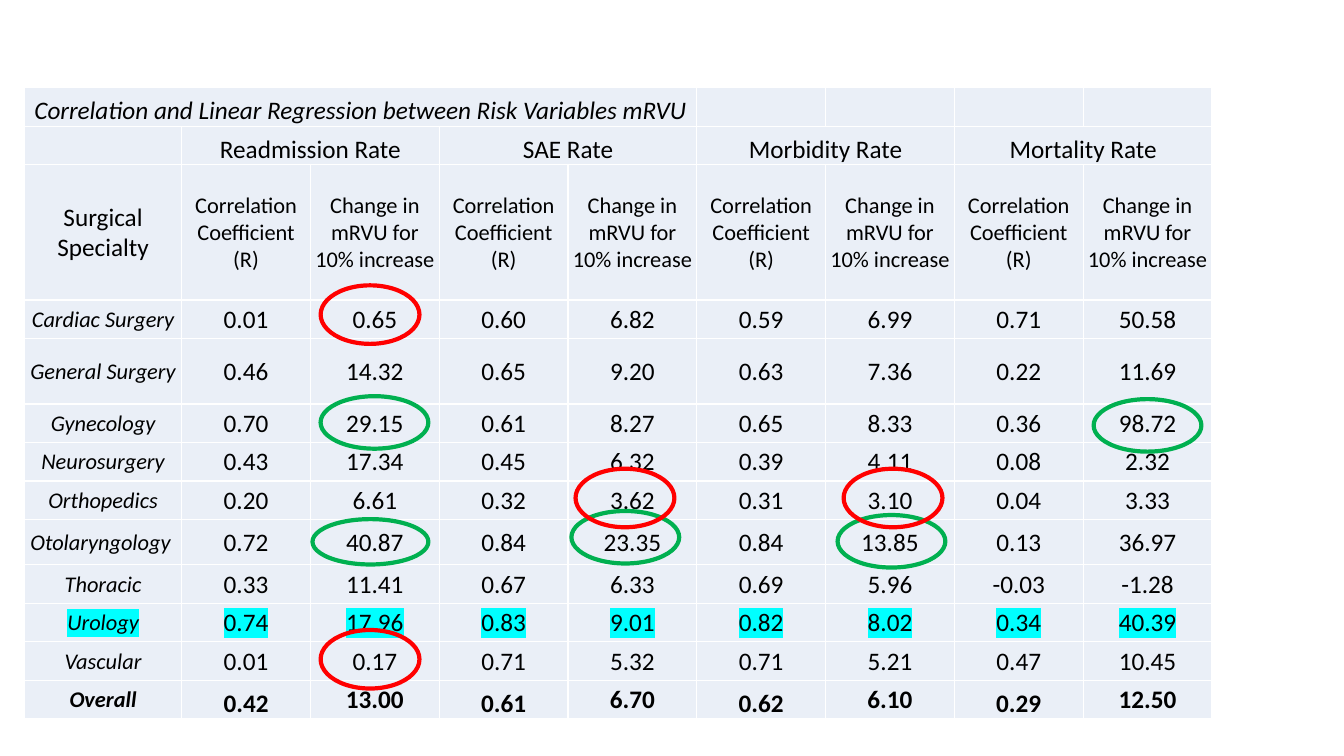
from lxml.etree import SubElement
from pptx import Presentation
from pptx.dml.color import RGBColor
from pptx.enum.shapes import MSO_SHAPE
from pptx.enum.text import MSO_ANCHOR, PP_ALIGN
from pptx.oxml.ns import qn
from pptx.util import Pt

FONT = "Calibri"
BLACK, WHITE, PALE, CYAN = "000000", "FFFFFF", "EAEFF7", "00FFFF"
GREEN, RED = "00B050", "FF0000"

TITLE = "Correlation and Linear Regression between Risk Variables mRVU"
RATES = ["Readmission Rate", "SAE Rate", "Morbidity Rate", "Mortality Rate"]
MEASURES = ["Correlation Coefficient (R)", "Change in mRVU for 10% increase"]
SPECIALTIES = [
    ("Cardiac Surgery", "0.01 0.65 0.60 6.82 0.59 6.99 0.71 50.58"),
    ("General Surgery", "0.46 14.32 0.65 9.20 0.63 7.36 0.22 11.69"),
    ("Gynecology", "0.70 29.15 0.61 8.27 0.65 8.33 0.36 98.72"),
    ("Neurosurgery", "0.43 17.34 0.45 6.32 0.39 4.11 0.08 2.32"),
    ("Orthopedics", "0.20 6.61 0.32 3.62 0.31 3.10 0.04 3.33"),
    ("Otolaryngology ", "0.72 40.87 0.84 23.35 0.84 13.85 0.13 36.97"),
    ("Thoracic", "0.33 11.41 0.67 6.33 0.69 5.96 -0.03 -1.28"),
    ("Urology", "0.74 17.96 0.83 9.01 0.82 8.02 0.34 40.39"),
    ("Vascular", "0.01 0.17 0.71 5.32 0.71 5.21 0.47 10.45"),
    ("Overall", "0.42 13.00 0.61 6.70 0.62 6.10 0.29 12.50"),
]
COL_WIDTHS = [112.3] + [92] * 8
ROW_HEIGHTS = [27.5, 27.5, 96.5, 27.5, 46.8] + [27.5] * 3 + [32.4] + [27.5] * 4

# left, top, width, height
HIGH_VALUES = [
    (229, 283, 77, 37.5),
    (223.2, 370.8, 82.8, 32.4),
    (408.2, 365, 77, 37.5),
    (598.3, 367.9, 77, 37.5),
    (781.2, 285.1, 77, 37.5),
]
LOW_VALUES = [(229, 203.8), (229, 450), (411.1, 334.8), (602.6, 334.8)]


def rgb(color):
    return RGBColor.from_string(color)


class Deck:
    def __init__(self, prs):
        self.slide = prs.slides.add_slide(prs.slide_layouts[6])

    def table(self, left, top, col_widths, row_heights):
        shape = self.slide.shapes.add_table(
            len(row_heights), len(col_widths), Pt(left), Pt(top),
            Pt(sum(col_widths)), Pt(sum(row_heights)))
        table = shape.table
        table.first_row = table.horz_banding = False
        for column, width in zip(table.columns, col_widths):
            column.width = Pt(width)
        for row, height in zip(table.rows, row_heights):
            row.height = Pt(height)
        for cell in table.iter_cells():
            self.cell_style(cell)
        return table

    def cell_style(self, cell):
        cell.margin_left = cell.margin_right = cell.margin_top = Pt(0.7)
        cell.margin_bottom = 0
        tc_pr = cell._tc.get_or_add_tcPr()
        for side in ("lnL", "lnR", "lnT", "lnB"):
            ln = SubElement(tc_pr, qn(f"a:{side}"), w=str(Pt(1)))
            fill = SubElement(ln, qn("a:solidFill"))
            SubElement(fill, qn("a:srgbClr"), val=WHITE)
        cell.fill.solid()
        cell.fill.fore_color.rgb = rgb(PALE)

    def cell_text(self, cell, text, size=18, bold=False, italic=False,
                  anchor=MSO_ANCHOR.MIDDLE, highlight=None):
        cell.vertical_anchor = anchor
        p = cell.text_frame.paragraphs[0]
        p.text = text
        p.alignment = PP_ALIGN.CENTER
        r = p.runs[0]
        r.font.size, r.font.bold, r.font.italic = Pt(size), bold, italic
        r.font.color.rgb = rgb(BLACK)
        if highlight:
            mark = SubElement(r._r.get_or_add_rPr(), qn("a:highlight"))
            SubElement(mark, qn("a:srgbClr"), val=highlight)
        r.font.name = FONT

    def ring(self, left, top, width, height, color):
        sp = self.slide.shapes.add_shape(
            MSO_SHAPE.OVAL, Pt(left), Pt(top), Pt(width), Pt(height))
        sp.shadow.inherit = False
        sp.fill.background()
        sp.line.color.rgb = rgb(color)
        sp.line.width = Pt(3)


def main():
    prs = Presentation()
    prs.slide_width, prs.slide_height = Pt(960), Pt(540)
    deck = Deck(prs)
    table = deck.table(17.5, 62.8, COL_WIDTHS, ROW_HEIGHTS)

    table.cell(0, 0).merge(table.cell(0, 4))
    deck.cell_text(table.cell(0, 0), TITLE, italic=True,
                   anchor=MSO_ANCHOR.BOTTOM)
    deck.cell_text(table.cell(2, 0), "Surgical Specialty")
    for i, rate in enumerate(RATES):
        col = 1 + 2 * i
        table.cell(1, col).merge(table.cell(1, col + 1))
        deck.cell_text(table.cell(1, col), rate, anchor=MSO_ANCHOR.BOTTOM)
        for j, measure in enumerate(MEASURES):
            deck.cell_text(table.cell(2, col + j), measure, size=16)

    for row, (name, values) in enumerate(SPECIALTIES, start=3):
        overall = name == "Overall"
        highlight = CYAN if name == "Urology" else None
        deck.cell_text(table.cell(row, 0), name, size=16, bold=overall,
                       italic=True, highlight=highlight)
        for col, value in enumerate(values.split(), start=1):
            low = overall and col % 2
            anchor = MSO_ANCHOR.BOTTOM if low else MSO_ANCHOR.MIDDLE
            deck.cell_text(table.cell(row, col), value, bold=overall,
                           anchor=anchor, highlight=highlight)

    for box in HIGH_VALUES:
        deck.ring(*box, GREEN)
    for left, top in LOW_VALUES:
        deck.ring(left, top, 70.6, 41.8, RED)

    prs.save("out.pptx")


if __name__ == "__main__":
    main()
